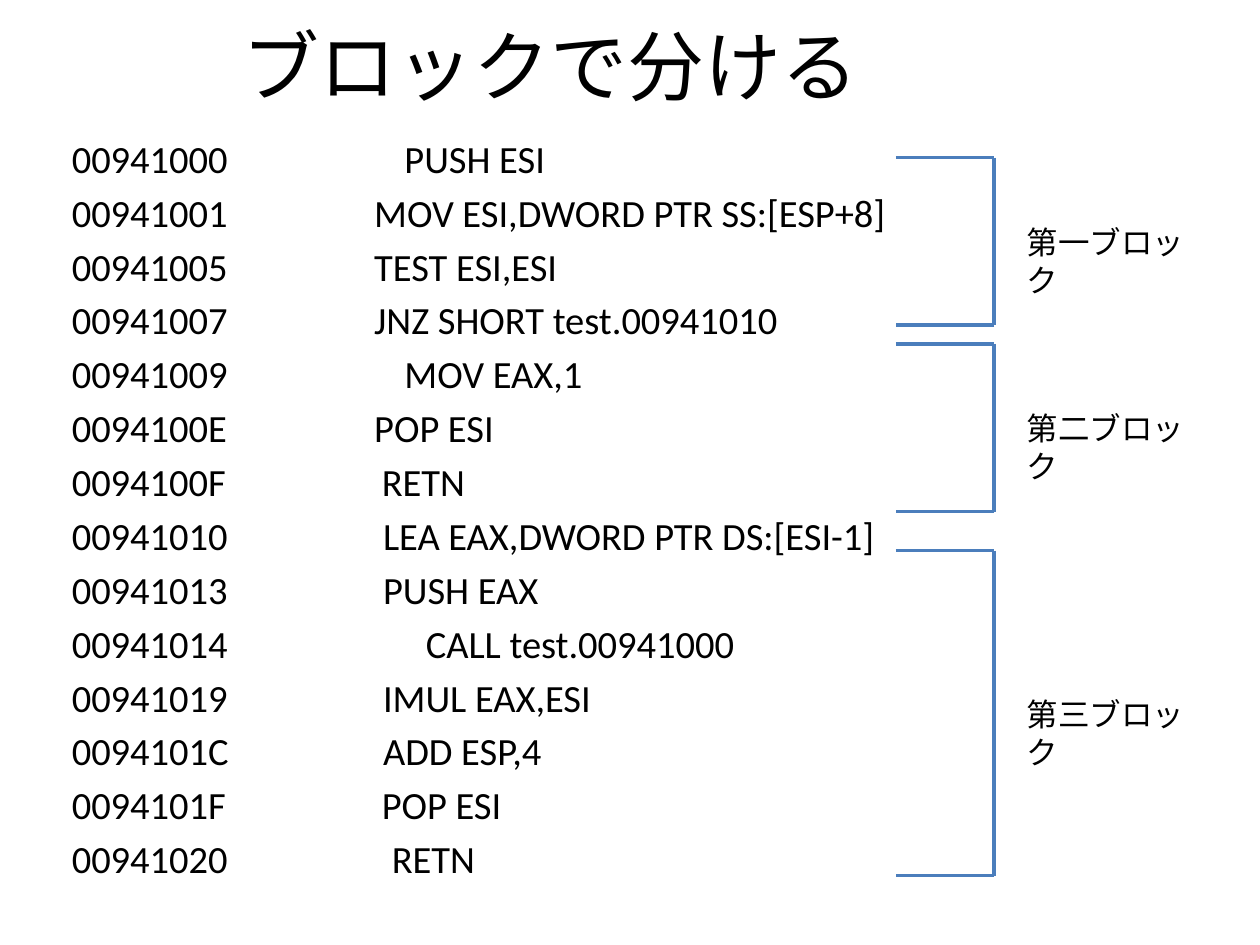
from lxml import etree
from pptx import Presentation
from pptx.dml.color import RGBColor
from pptx.enum.shapes import MSO_CONNECTOR
from pptx.enum.text import MSO_ANCHOR, MSO_AUTO_SIZE, PP_ALIGN
from pptx.oxml.ns import qn
from pptx.util import Inches, Pt

STRAIGHT = MSO_CONNECTOR.STRAIGHT
CENTER = PP_ALIGN.CENTER
TOP, MIDDLE = MSO_ANCHOR.TOP, MSO_ANCHOR.MIDDLE
NO_AUTOFIT = MSO_AUTO_SIZE.NONE

BLACK = RGBColor(0x00, 0x00, 0x00)
BRACKET_BLUE = RGBColor(0x4B, 0x7E, 0xBC)

# Address, instruction, indent of the instruction in inches
LISTING = [
    ("00941000", "PUSH ESI", 2.64),
    ("00941001", "MOV ESI,DWORD PTR SS:[ESP+8]", 2.4),
    ("00941005", "TEST ESI,ESI", 2.4),
    ("00941007", "JNZ SHORT test.00941010", 2.4),
    ("00941009", "MOV EAX,1", 2.64),
    ("0094100E", "POP ESI", 2.4),
    ("0094100F", "RETN", 2.46),
    ("00941010", "LEA EAX,DWORD PTR DS:[ESI-1]", 2.47),
    ("00941013", "PUSH EAX", 2.47),
    ("00941014", "CALL test.00941000", 2.81),
    ("00941019", "IMUL EAX,ESI", 2.47),
    ("0094101C", "ADD ESP,4", 2.47),
    ("0094101F", "POP ESI", 2.46),
    ("00941020", "RETN", 2.54),
]

# Label, bracket top, bracket bottom, label top in inches
BLOCKS = [
    ("第一ブロック", 1.25, 2.58, 1.72),
    ("第二ブロック", 2.73, 4.06, 3.2),
    ("第三ブロック", 4.37, 6.95, 5.47),
]


def place(shape, left, top, width, height):
    shape.left, shape.top = Inches(left), Inches(top)
    shape.width, shape.height = Inches(width), Inches(height)


def add_run(paragraph, text, size, font_name="Calibri"):
    run = paragraph.add_run()
    run.text = text
    run.font.size = Pt(size)
    run.font.name = font_name
    run.font.color.rgb = BLACK


def set_hanging_indent(paragraph, position):
    """Hang the address left of the indent, where the tab also stops."""
    indent = Inches(position)
    properties = paragraph._p.get_or_add_pPr()
    properties.set("marL", str(indent))
    properties.set("indent", str(-indent))
    etree.SubElement(properties, qn("a:buNone"))
    tabs = etree.SubElement(properties, qn("a:tabLst"))
    etree.SubElement(tabs, qn("a:tab"), pos=str(indent), algn="l")


def fill_title(title, left, top, width, height):
    place(title, left, top, width, height)
    frame = title.text_frame
    frame.auto_size = NO_AUTOFIT
    frame.vertical_anchor = MIDDLE
    paragraph = frame.paragraphs[0]
    paragraph.alignment = CENTER
    add_run(paragraph, "ブロックで分ける", 44, "Arial")


def fill_listing(body, left, top, width, height):
    place(body, left, top, width, height)
    frame = body.text_frame
    frame.auto_size = NO_AUTOFIT
    frame.vertical_anchor = TOP
    for index, (address, instruction, position) in enumerate(LISTING):
        paragraph = frame.add_paragraph() if index else frame.paragraphs[0]
        paragraph.space_before = Pt(4.4 if index else 0)
        set_hanging_indent(paragraph, position)
        add_run(paragraph, f"{address}\t{instruction}", 22)


def add_bracket(slide, left, top, right, bottom):
    corners = [(left, top), (right, top), (right, bottom), (left, bottom)]
    for start, end in zip(corners, corners[1:]):
        line = slide.shapes.add_connector(
            STRAIGHT, *(Inches(value) for value in start + end))
        line.line.color.rgb = BRACKET_BLUE
        line.line.width = Pt(2)
        etree.SubElement(line._element.spPr, qn("a:effectLst"))


def add_label(slide, text, left, top, width, height):
    box = slide.shapes.add_textbox(
        Inches(left), Inches(top), Inches(width), Inches(height))
    box.text_frame.word_wrap = True
    add_run(box.text_frame.paragraphs[0], text, 18)


def main():
    presentation = Presentation()
    presentation.slide_width = Inches(10)
    presentation.slide_height = Inches(7.5)
    slide = presentation.slides.add_slide(presentation.slide_layouts[1])

    # Title and code listing
    fill_title(slide.shapes.title, 1.17, 0, 6.41, 1.02)
    fill_listing(slide.placeholders[1], 0.47, 1.02, 9.3, 4.95)

    # Brackets and labels for the blocks
    for label, top, bottom, label_top in BLOCKS:
        add_bracket(slide, 7.11, top, 7.89, bottom)
        add_label(slide, label, 8.05, label_top, 1.54, 0.4)

    presentation.save("out.pptx")


if __name__ == "__main__":
    main()
